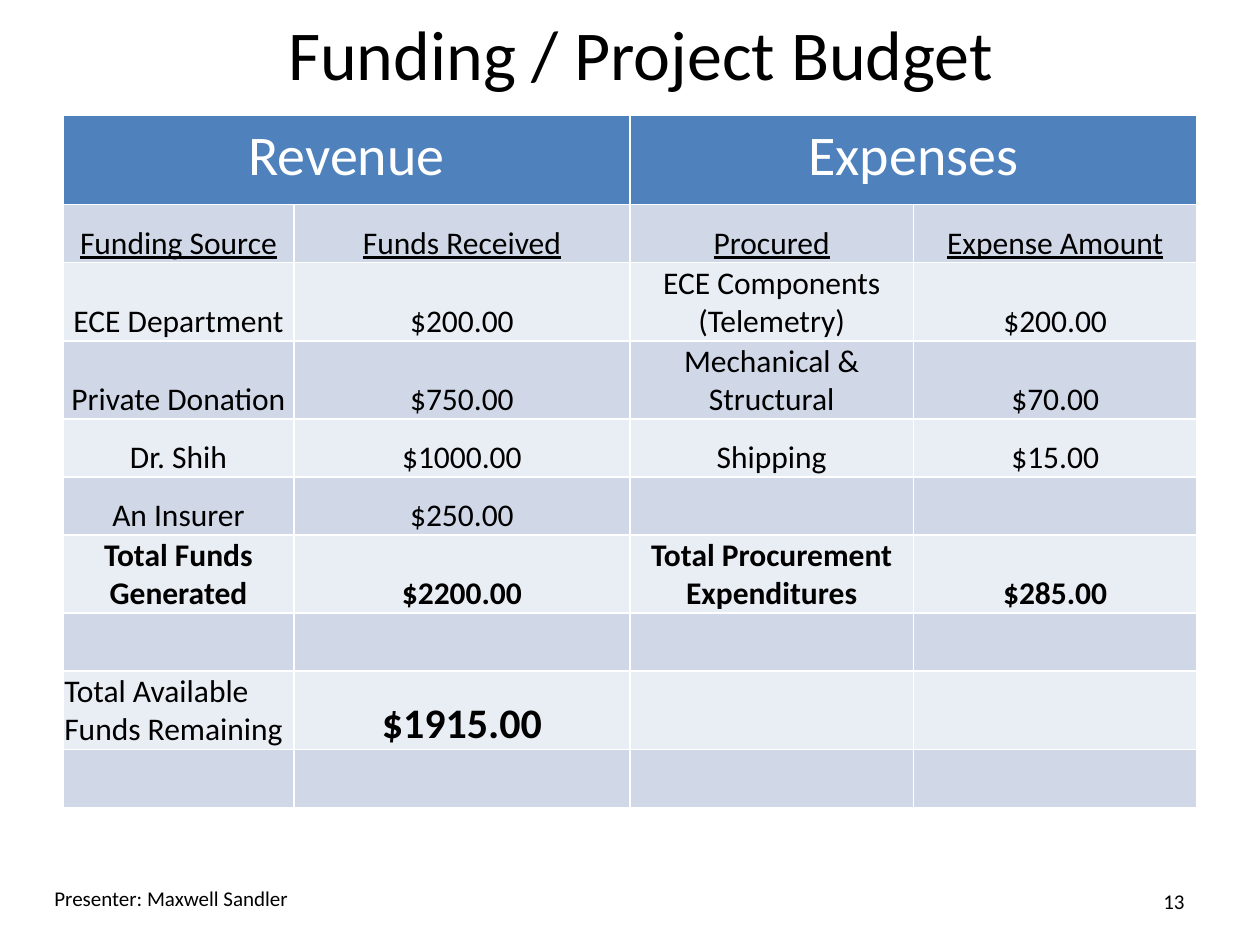
from pptx import Presentation
from pptx.dml.color import RGBColor
from pptx.enum.text import MSO_ANCHOR as Anchor, PP_ALIGN as Align
from pptx.util import Pt

FONT = "Calibri"
BLACK = RGBColor(0x00, 0x00, 0x00)
WHITE = RGBColor(0xFF, 0xFF, 0xFF)
BLUE = RGBColor(0x4F, 0x81, 0xBD)
DARK = RGBColor(0xD0, 0xD8, 0xE8)
LIGHT = RGBColor(0xE9, 0xED, 0xF4)

WIDTHS = (132, 192, 162, 162)
HEAD_H, ROW_H = 51, 33.12
NAMES, TOTALS, LEFT = 0, 5, 7
ROWS = [
    ("Funding Source", "Funds Received", "Procured", "Expense Amount"),
    ("ECE Department", "$200.00", "ECE Components (Telemetry)", "$200.00"),
    ("Private Donation", "$750.00", "Mechanical & Structural", "$70.00"),
    ("Dr. Shih", "$1000.00", "Shipping", "$15.00"),
    ("An Insurer", "$250.00", "", ""),
    ("Total Funds Generated", "$2200.00",
     "Total Procurement Expenditures", "$285.00"),
    ("", "", "", ""),
    ("Total Available Funds Remaining", "$1915.00", "", ""),
    ("", "", "", ""),
]


def write(frame, text, size, align, color=BLACK, bold=False, line=False):
    frame.text = text
    para = frame.paragraphs[0]
    para.alignment = align
    for run in para.runs:
        font = run.font
        font.name, font.size, font.bold = FONT, Pt(size), bold
        font.underline = line
        font.color.rgb = color


def paint(cell, color):
    cell.fill.solid()
    cell.fill.fore_color.rgb = color


def add_title(slide, text):
    title = slide.shapes.title
    title.left, title.top = Pt(42), Pt(0)
    title.width, title.height = Pt(648), Pt(60)
    title.text_frame.vertical_anchor = Anchor.MIDDLE
    write(title.text_frame, text, 40, Align.CENTER)


def add_note(slide, text, left, top, align):
    box = slide.shapes.add_textbox(Pt(left), Pt(top), Pt(168), Pt(28.75))
    frame = box.text_frame
    frame.word_wrap = True
    frame.vertical_anchor = Anchor.MIDDLE
    write(frame, text, 12, align)


def add_head(table):
    for col, text in ((0, "Revenue"), (2, "Expenses")):
        cell = table.cell(0, col)
        cell.merge(table.cell(0, col + 1))
        paint(cell, BLUE)
        write(cell.text_frame, text, 32, Align.CENTER, WHITE)


def fill_cell(cell, text, row, col):
    paint(cell, LIGHT if row % 2 else DARK)
    if not text:
        return
    cell.vertical_anchor = Anchor.BOTTOM
    cell.margin_left = cell.margin_right = cell.margin_top = Pt(0.75)
    cell.margin_bottom = Pt(0)
    label = row == LEFT and col == 0
    result = row == LEFT and col == 1
    write(cell.text_frame, text, 24 if result else 18,
          Align.LEFT if label else Align.CENTER,
          bold=row == TOTALS or result, line=row == NAMES)


def add_budget(slide):
    count = len(ROWS)
    frame = slide.shapes.add_table(
        count + 1, len(WIDTHS), Pt(36), Pt(66),
        Pt(sum(WIDTHS)), Pt(HEAD_H + count * ROW_H))
    table = frame.table
    for col, width in zip(table.columns, WIDTHS):
        col.width = Pt(width)
    for row in table.rows:
        row.height = Pt(ROW_H)
    table.rows[0].height = Pt(HEAD_H)
    add_head(table)
    for row, texts in enumerate(ROWS):
        for col, text in enumerate(texts):
            fill_cell(table.cell(row + 1, col), text, row, col)


def main():
    deck = Presentation()
    deck.slide_width, deck.slide_height = Pt(720), Pt(540)
    slide = deck.slides.add_slide(deck.slide_layouts[5])
    add_budget(slide)
    add_title(slide, "Funding / Project Budget")
    add_note(slide, "Presenter: Maxwell Sandler", 24, 499, Align.LEFT)
    add_note(slide, "13", 516, 500.5, Align.RIGHT)
    deck.save("out.pptx")


if __name__ == "__main__":
    main()
